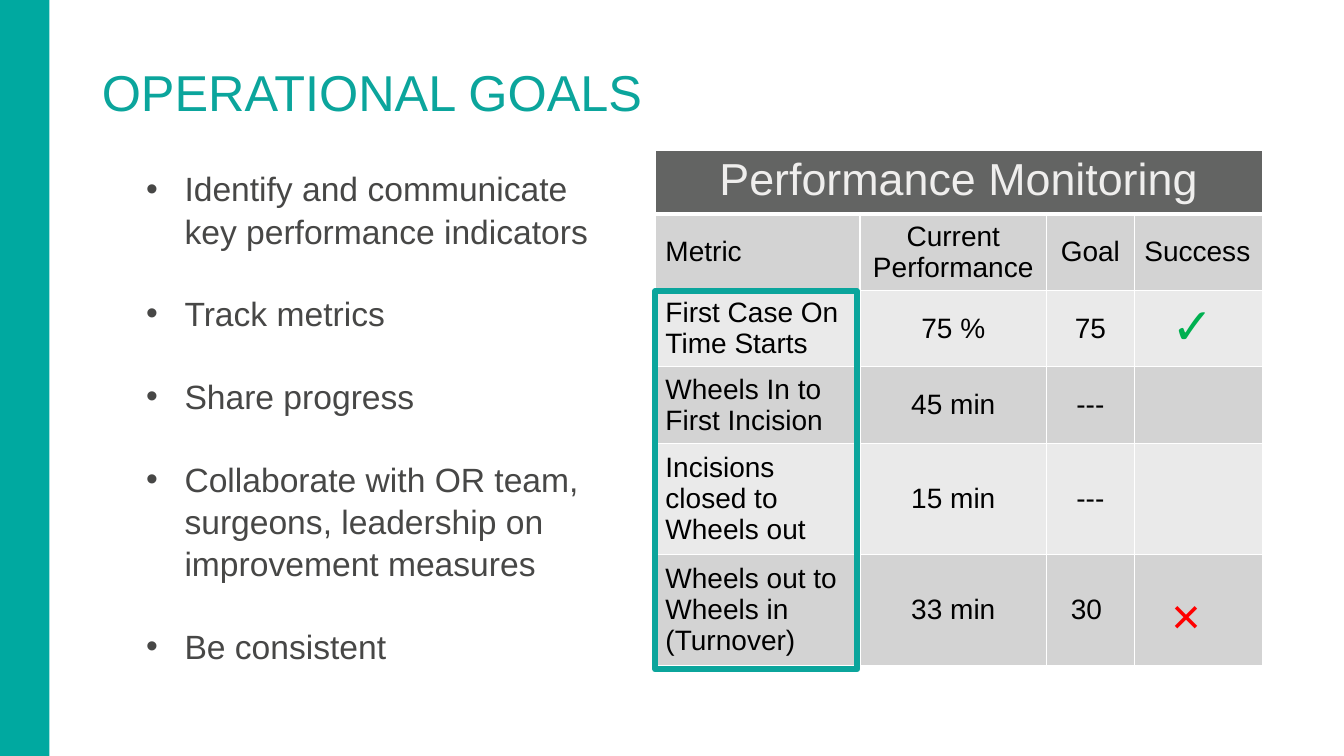
from pptx import Presentation
from pptx import util as u
from pptx.dml.color import RGBColor
from pptx.enum import shapes, text
from pptx.oxml import parse_xml
from pptx.oxml.ns import nsdecls

# Content
TITLE = "OPERATIONAL GOALS"
GOALS = [
    "Identify and communicate key performance indicators",
    "Track metrics",
    "Share progress",
    "Collaborate with OR team, surgeons, leadership on improvement measures",
    "Be consistent",
]
TABLE_TITLE = "Performance Monitoring"
ROWS = [
    ("Metric", "Current Performance", "Goal", "Success"),
    ("First Case On Time Starts", "75 %", "75", ""),
    ("Wheels In to First Incision", "45 min", "---", ""),
    ("Incisions closed to Wheels out", "15 min", "---", ""),
    ("Wheels out to Wheels in (Turnover)", "33 min", "30 ", ""),
]
MARKS = [("✓", 2.87, 0.64, "00B050"), ("×", 5.75, 0.82, "FF0000")]

# Geometry in inches, and colours
TABLE_LEFT, TABLE_TOP = 6.5, 1.49
COLUMN_WIDTHS = [2.03, 1.85, 0.87, 1.27]
ROW_HEIGHTS = [0.63, 0.76, 0.76, 0.76, 1.1, 1.1]
TEAL, BAR_TEAL = "0BA59C", "00A9A0"
BANDS = ["D3D3D3", "EAEAEA"]
ALIGN = text.PP_ALIGN


def color(value):
    return RGBColor.from_string(value)


def write(para, words, size, ink, align=ALIGN.LEFT):
    para.alignment = align
    span = para.add_run()
    span.text = words
    span.font.size = u.Pt(size)
    span.font.name = "Arial"
    span.font.bold = False
    span.font.color.rgb = color(ink)


def place(shape, left, top, width, height):
    shape.left, shape.top = u.Inches(left), u.Inches(top)
    shape.width, shape.height = u.Inches(width), u.Inches(height)


def add_box(left, top, width, height):
    box = page.shapes.add_shape(
        shapes.MSO_SHAPE.RECTANGLE,
        *(u.Inches(v) for v in (left, top, width, height)))
    box.shadow.inherit = False
    return box


def style_cell(cell, fill, bottom=1):
    props = cell._tc.get_or_add_tcPr()
    for side, width in zip("LRTB", (1, 1, 1, bottom)):
        props.append(parse_xml(
            f'<a:ln{side} {nsdecls("a")} w="{u.Pt(width)}"><a:solidFill>'
            f'<a:srgbClr val="FFFFFF"/></a:solidFill></a:ln{side}>'))
    cell.fill.solid()
    cell.fill.fore_color.rgb = color(fill)


deck = Presentation()
deck.slide_width, deck.slide_height = u.Inches(13.33), u.Inches(7.5)
page = deck.slides.add_slide(deck.slide_layouts[1])
title, body = page.placeholders

# Side bar
bar = add_box(0, 0, 0.49, 7.5)
bar.fill.solid()
bar.fill.fore_color.rgb = color(BAR_TEAL)
bar.line.fill.background()

# Title
place(title, 0.91, 0.34, 12.43, 1.13)
title.text_frame.vertical_anchor = text.MSO_ANCHOR.MIDDLE
write(title.text_frame.paragraphs[0], TITLE, 36, TEAL)

# Goals
place(body, 1.35, 1.6, 4.61, 4.95)
body.text_frame.auto_size = text.MSO_AUTO_SIZE.NONE
for index, goal in enumerate(GOALS):
    para = body.text_frame.paragraphs[0] if index == 0 else body.text_frame.add_paragraph()
    props = para._p.get_or_add_pPr()
    props.set("marL", str(u.Inches(0.38)))
    props.set("indent", str(-u.Inches(0.38)))
    para.line_spacing = 1.05
    para.space_before = u.Pt(0 if index == 0 else 28.8)
    write(para, goal, 24, "474746")

# Performance table
table = page.shapes.add_table(
    len(ROW_HEIGHTS), len(COLUMN_WIDTHS), u.Inches(TABLE_LEFT), u.Inches(TABLE_TOP),
    u.Inches(sum(COLUMN_WIDTHS)), u.Inches(sum(ROW_HEIGHTS))).table
for column, width in zip(table.columns, COLUMN_WIDTHS):
    column.width = u.Inches(width)
for row, height in zip(table.rows, ROW_HEIGHTS):
    row.height = u.Inches(height)

for cell in table.rows[0].cells:
    style_cell(cell, "636463", bottom=3)
heading = table.cell(0, 0)
heading.merge(table.cell(0, len(COLUMN_WIDTHS) - 1))
write(heading.text_frame.paragraphs[0], TABLE_TITLE, 32, "EFEEED", ALIGN.CENTER)

for r, values in enumerate(ROWS):
    for c, value in enumerate(values):
        cell = table.cell(r + 1, c)
        style_cell(cell, BANDS[r % 2])
        cell.vertical_anchor = text.MSO_ANCHOR.MIDDLE
        if value:
            write(cell.text_frame.paragraphs[0], value, 20, "000000",
                  ALIGN.CENTER if c in (1, 2) else ALIGN.LEFT)

# Frame around the metric names
frame = add_box(TABLE_LEFT, 2.89, 2, 3.75)
frame.fill.background()
frame.line.color.rgb = color(TEAL)
frame.line.width = u.Pt(4.5)

# Success marks
for mark, top, width, ink in MARKS:
    box = page.shapes.add_textbox(
        u.Inches(11.52), u.Inches(top), u.Inches(width), u.Inches(0.71))
    box.text_frame.word_wrap = True
    write(box.text_frame.paragraphs[0], mark, 36, ink)

deck.save("out.pptx")
